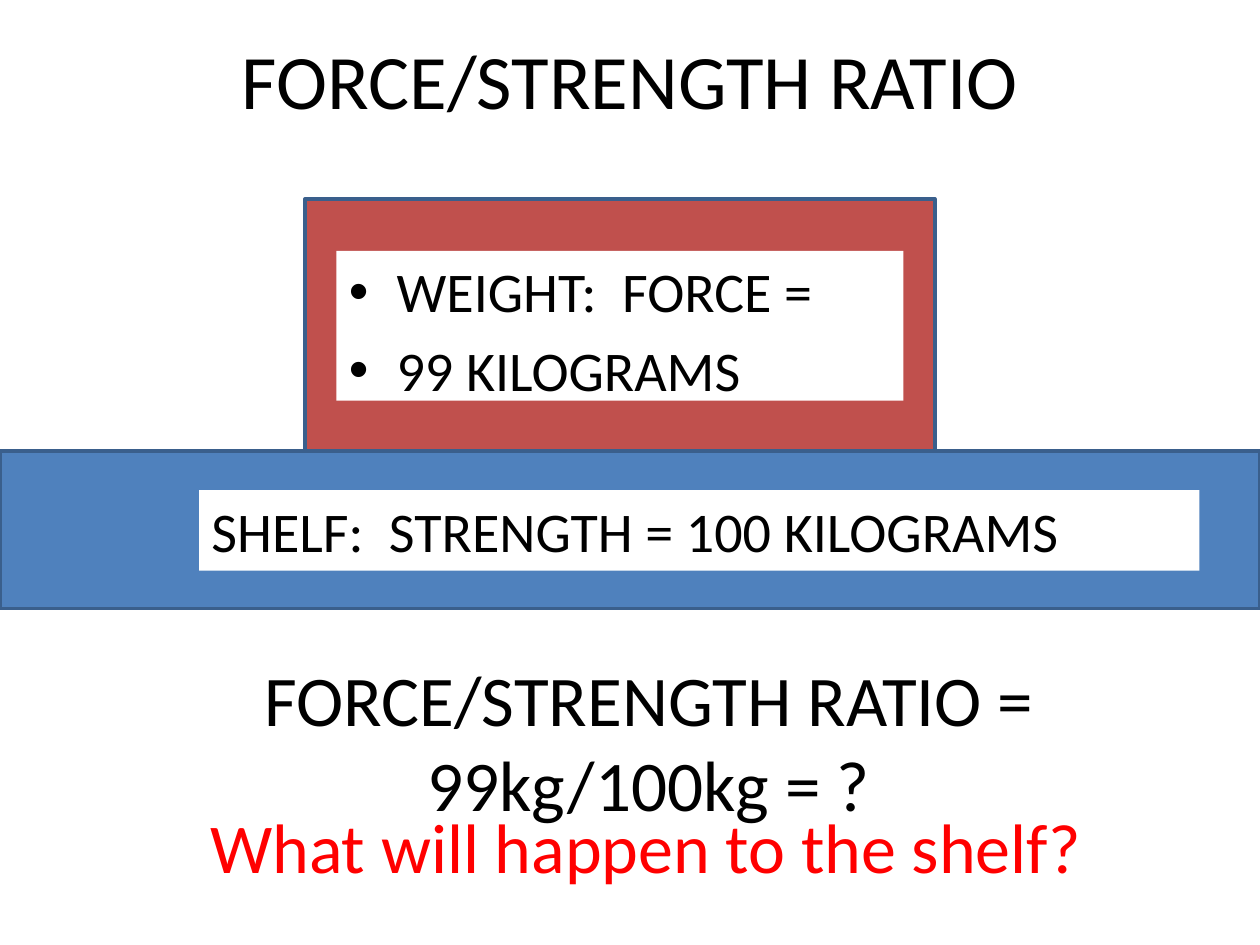
import pptx
import pptx.util
import pptx.dml.color
import pptx.enum.shapes
import pptx.enum.text
from lxml import etree

Inches, Pt = pptx.util.Inches, pptx.util.Pt
RGBColor = pptx.dml.color.RGBColor
ANCHOR = pptx.enum.text.MSO_ANCHOR
ALIGN = pptx.enum.text.PP_ALIGN

BLACK = RGBColor(0x00, 0x00, 0x00)
WHITE = RGBColor(0xFF, 0xFF, 0xFF)
RED = RGBColor(0xFF, 0x00, 0x00)
SHELF_BLUE = RGBColor(0x4F, 0x81, 0xBD)
WEIGHT_RED = RGBColor(0xC0, 0x50, 0x4D)
EDGE = RGBColor(0x3A, 0x5F, 0x8C)
FONT = "Calibri"

BLOCKS = [
    ((0, 3.58, 10, 1.25), SHELF_BLUE),
    ((2.42, 1.58, 5, 2), WEIGHT_RED),
]

TEXTS = [
    dict(at=(0.5, 0, 9, 1.25), lines=["FORCE/STRENGTH RATIO"], size=44, centered=True),
    dict(at=(1.58, 3.89, 7.94, 0.64), lines=["SHELF:  STRENGTH = 100 KILOGRAMS"],
         size=32, fill=WHITE),
    dict(at=(2.67, 1.99, 4.5, 1.19), lines=["WEIGHT:  FORCE =", "99 KILOGRAMS"],
         size=32, fill=WHITE, bullets=True),
    dict(at=(0.65, 5.25, 9, 1.25), lines=["FORCE/STRENGTH RATIO = 99kg/100kg = ?"],
         size=40.7, centered=True),
    dict(at=(1.57, 6.33, 7.67, 0.77), lines=["What will happen to the shelf?"],
         size=40, color=RED),
]


def add_block(s, at, fill):
    sp = s.shapes.add_shape(pptx.enum.shapes.MSO_SHAPE.RECTANGLE, *map(Inches, at))
    sp.shadow.inherit = False
    sp.fill.solid()
    sp.fill.fore_color.rgb = fill
    sp.line.color.rgb = EDGE
    sp.line.width = Pt(2)


def add_bullet(p):
    pPr = p._p.get_or_add_pPr()
    pPr.set("marL", str(Inches(0.38)))
    pPr.set("indent", str(-Inches(0.38)))
    ns = pptx.oxml.ns.qn
    etree.SubElement(pPr, ns("a:buFont")).set("typeface", "Arial")
    etree.SubElement(pPr, ns("a:buChar")).set("char", "•")


def add_text(s, at, lines, size, color=BLACK, fill=None, centered=False, bullets=False):
    sp = s.shapes.add_textbox(*map(Inches, at))
    if fill is not None:
        sp.fill.solid()
        sp.fill.fore_color.rgb = fill
    tf = sp.text_frame
    tf.word_wrap = True
    tf.vertical_anchor = ANCHOR.MIDDLE if centered else ANCHOR.TOP
    for i, line in enumerate(lines):
        p = tf.paragraphs[0] if i == 0 else tf.add_paragraph()
        p.alignment = ALIGN.CENTER if centered else ALIGN.LEFT
        if bullets:
            add_bullet(p)
        if i:
            p.space_before = Pt(size * 0.2)
        r = p.add_run()
        r.text = line
        r.font.name = FONT
        r.font.size = Pt(size)
        r.font.color.rgb = color


def main():
    prs = pptx.Presentation()
    prs.slide_width, prs.slide_height = Inches(10), Inches(7.5)
    s = prs.slides.add_slide(prs.slide_layouts[6])
    for at, fill in BLOCKS:
        add_block(s, at, fill)
    for text in TEXTS:
        add_text(s, **text)
    prs.save("out.pptx")


if __name__ == "__main__":
    main()
